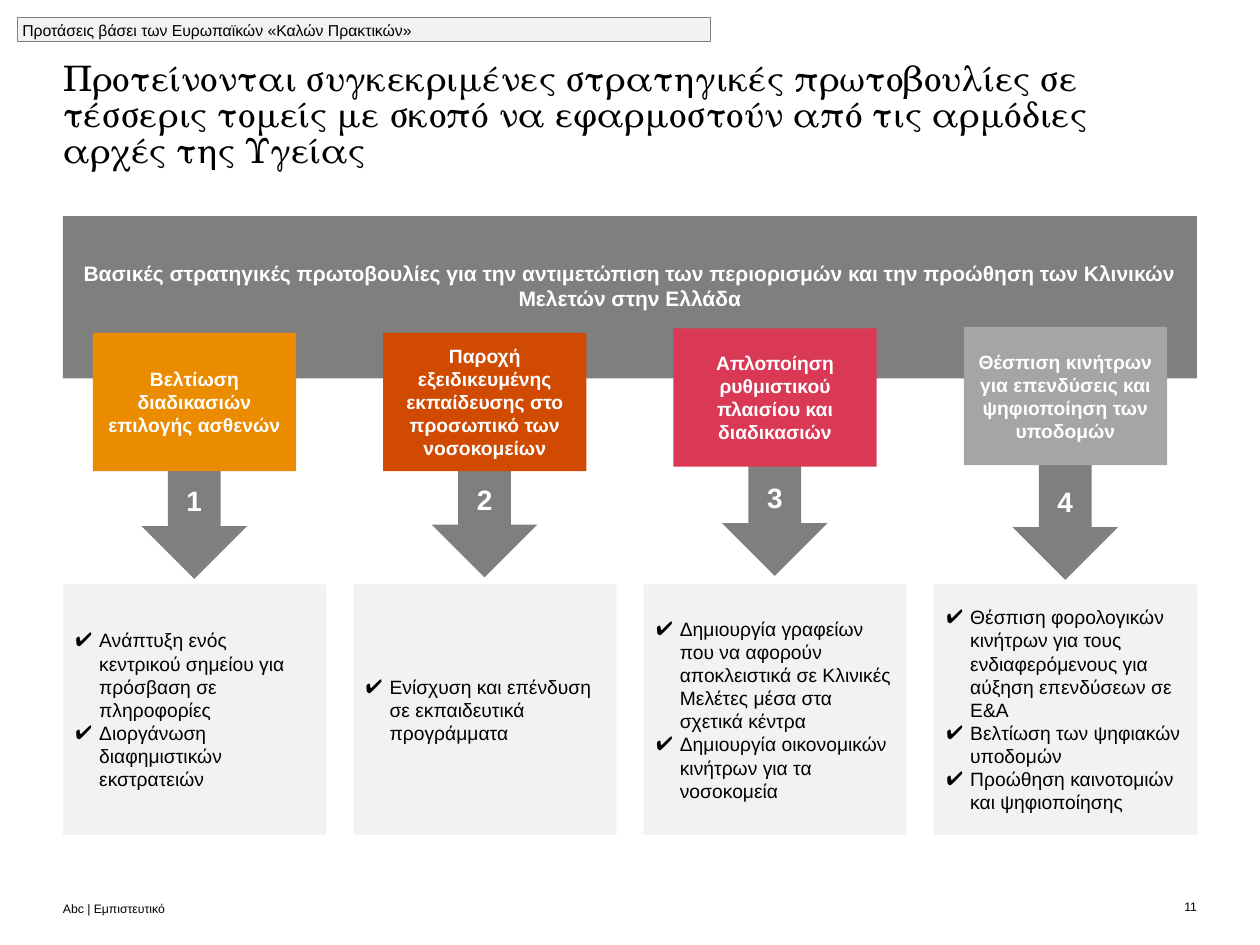
from lxml import etree
from pptx import Presentation
from pptx import util as u
from pptx.dml.color import RGBColor
from pptx.enum import shapes, text
from pptx.oxml import ns

HUES = {"ink": "000000", "white": "FFFFFF", "gray": "7F7F7F", "pale": "F2F2F2",
        "amber": "EB8C00", "rust": "D04A02", "rose": "D93954", "ash": "A5A5A5"}
RECT = shapes.MSO_SHAPE.RECTANGLE
ARROW = shapes.MSO_SHAPE.DOWN_ARROW
LEFT, MID, RIGHT = text.PP_ALIGN.LEFT, text.PP_ALIGN.CENTER, text.PP_ALIGN.RIGHT
TOP, CORE, BASE = text.MSO_ANCHOR.TOP, text.MSO_ANCHOR.MIDDLE, text.MSO_ANCHOR.BOTTOM

ITEMS = [
    dict(head="Βελτίωση διαδικασιών επιλογής ασθενών", hue="amber", rise=6.71, drop=9.05,
         tasks=["Ανάπτυξη ενός κεντρικού σημείου για πρόσβαση σε πληροφορίες",
                "Διοργάνωση διαφημιστικών εκστρατειών"]),
    dict(head="Παροχή εξειδικευμένης εκπαίδευσης στο προσωπικό των νοσοκομείων",
         hue="rust", rise=6.71, drop=9.02,
         tasks=["Ενίσχυση και επένδυση σε εκπαιδευτικά προγράμματα"]),
    dict(head="Απλοποίηση ρυθμιστικού πλαισίου και διαδικασιών", hue="rose", rise=6.62, drop=8.99,
         tasks=["Δημιουργία γραφείων που να αφορούν αποκλειστικά σε Κλινικές Μελέτες "
                "μέσα στα σχετικά κέντρα",
                "Δημιουργία οικονομικών κινήτρων για τα νοσοκομεία"]),
    dict(head="Θέσπιση κινήτρων για επενδύσεις και ψηφιοποίηση των υποδομών",
         hue="ash", rise=6.59, drop=9.07,
         tasks=["Θέσπιση φορολογικών κινήτρων για τους ενδιαφερόμενους για αύξηση "
                "επενδύσεων σε Ε&Α",
                "Βελτίωση των ψηφιακών υποδομών",
                "Προώθηση καινοτομιών και ψηφιοποίησης"]),
]


def tint(name):
    """Return the named colour."""
    return RGBColor.from_string(HUES[name])


def check(para):
    """Give a paragraph a hanging check mark."""
    props = para._p.get_or_add_pPr()
    props.set("marL", str(u.Cm(0.48)))
    props.set("indent", str(-u.Cm(0.48)))
    shade = etree.SubElement(props, ns.qn("a:buClr"))
    etree.SubElement(shade, ns.qn("a:srgbClr")).set("val", HUES["ink"])
    etree.SubElement(props, ns.qn("a:buFont")).set("typeface", "Arial")
    etree.SubElement(props, ns.qn("a:buChar")).set("char", "✔")


def write(shape, lines, size=11, hue="ink", bold=False, face="Arial", align=LEFT,
          anchor=CORE, pad=(0, 0, 0, 0), space=None, marks=False):
    """Fill a shape with formatted paragraphs."""
    frame = shape.text_frame
    frame.word_wrap = True
    frame.auto_size = text.MSO_AUTO_SIZE.NONE
    frame.vertical_anchor = anchor
    (frame.margin_left, frame.margin_top,
     frame.margin_right, frame.margin_bottom) = map(u.Cm, pad)
    for i, line in enumerate(lines):
        para = frame.add_paragraph() if i else frame.paragraphs[0]
        para.alignment = align
        if space:
            para.line_spacing = space
        if marks:
            check(para)
        run = para.add_run()
        run.text = line
        run.font.size = u.Pt(size)
        run.font.bold = bold
        run.font.name = face
        run.font.color.rgb = tint(hue)


def block(slide, kind, box, hue, edge=None):
    """Add a flat filled shape."""
    shape = slide.shapes.add_shape(kind, *map(u.Cm, box))
    shape.shadow.inherit = False
    shape.fill.solid()
    shape.fill.fore_color.rgb = tint(hue)
    if edge:
        shape.line.color.rgb = tint(edge)
        shape.line.width = u.Pt(0.75)
    else:
        shape.line.fill.background()
    return shape


def title(slide, box, words):
    """Place the slide title."""
    shape = slide.shapes.title
    shape.left, shape.top, shape.width, shape.height = map(u.Cm, box)
    write(shape, [words], size=20, face="TeX Gyre Schola", anchor=TOP, space=0.85)


def banner(slide, box, words):
    """Draw the wide band above the columns."""
    write(block(slide, RECT, box, "gray"), [words], size=12, hue="white", bold=True,
          align=MID, pad=(0.25, 0.13, 0.25, 0.61))


def column(slide, box, number, item):
    """Draw one initiative: arrow, heading and task card."""
    left, top, width, height = box
    center = left + width / 2
    arrow = block(slide, ARROW, (center - 1.07, item["drop"], 2.13, 2.62), "gray")
    write(arrow, [str(number)], size=16, hue="white", bold=True, align=MID,
          pad=(0.25, 0.13, 0.25, 0.13))
    head = block(slide, RECT, (center - 2.05, item["rise"], 4.1, 2.79), item["hue"])
    write(head, [item["head"]], hue="white", bold=True, align=MID,
          pad=(0.25, 0.18, 0.25, 0.18))
    card = block(slide, RECT, (left, top, width, height), "pale")
    write(card, item["tasks"], marks=True, pad=(0.25, 0.13, 0.25, 0.13))


def columns(slide, box, gap):
    """Spread the initiatives evenly over the box."""
    left, top, width, height = box
    wide = (width - gap * (len(ITEMS) - 1)) / len(ITEMS)
    for i, item in enumerate(ITEMS):
        column(slide, (left + i * (wide + gap), top, wide, height), i + 1, item)


def label(slide, box, words):
    """Draw the section tag at the top."""
    write(block(slide, RECT, box, "pale", edge="gray"), [words], size=9,
          pad=(0.09, 0, 0, 0))


def footer(slide, box):
    """Place the notice and the page number."""
    left, top, width, height = box
    note = slide.shapes.add_textbox(*map(u.Cm, (left, top, 11.05, height)))
    write(note, ["Abc | Εμπιστευτικό"], size=7, anchor=BASE)
    page = slide.shapes.add_textbox(*map(u.Cm, (left + width - 0.53, top, 0.53, height)))
    write(page, ["11"], size=7, align=RIGHT)


def main():
    """Build and save the slide."""
    deck = Presentation()
    deck.slide_width, deck.slide_height = u.Cm(25.4), u.Cm(19.05)
    slide = deck.slides.add_slide(deck.slide_layouts[5])
    title(slide, (1.27, 1.27, 22.86, 1.3),
          "Προτείνονται συγκεκριμένες στρατηγικές πρωτοβουλίες σε τέσσερις τομείς "
          "με σκοπό να εφαρμοστούν από τις αρμόδιες αρχές της Υγείας")
    banner(slide, (1.27, 4.36, 22.86, 3.27),
           "Βασικές στρατηγικές πρωτοβουλίες για την αντιμετώπιση των περιορισμών "
           "και την προώθηση των Κλινικών Μελετών στην Ελλάδα")
    columns(slide, (1.27, 11.78, 22.86, 5.05), 0.55)
    label(slide, (0.36, 0.36, 13.97, 0.48),
          "Προτάσεις βάσει των Ευρωπαϊκών «Καλών Πρακτικών»")
    footer(slide, (1.27, 18.08, 22.86, 0.38))
    deck.save("out.pptx")


if __name__ == "__main__":
    main()
